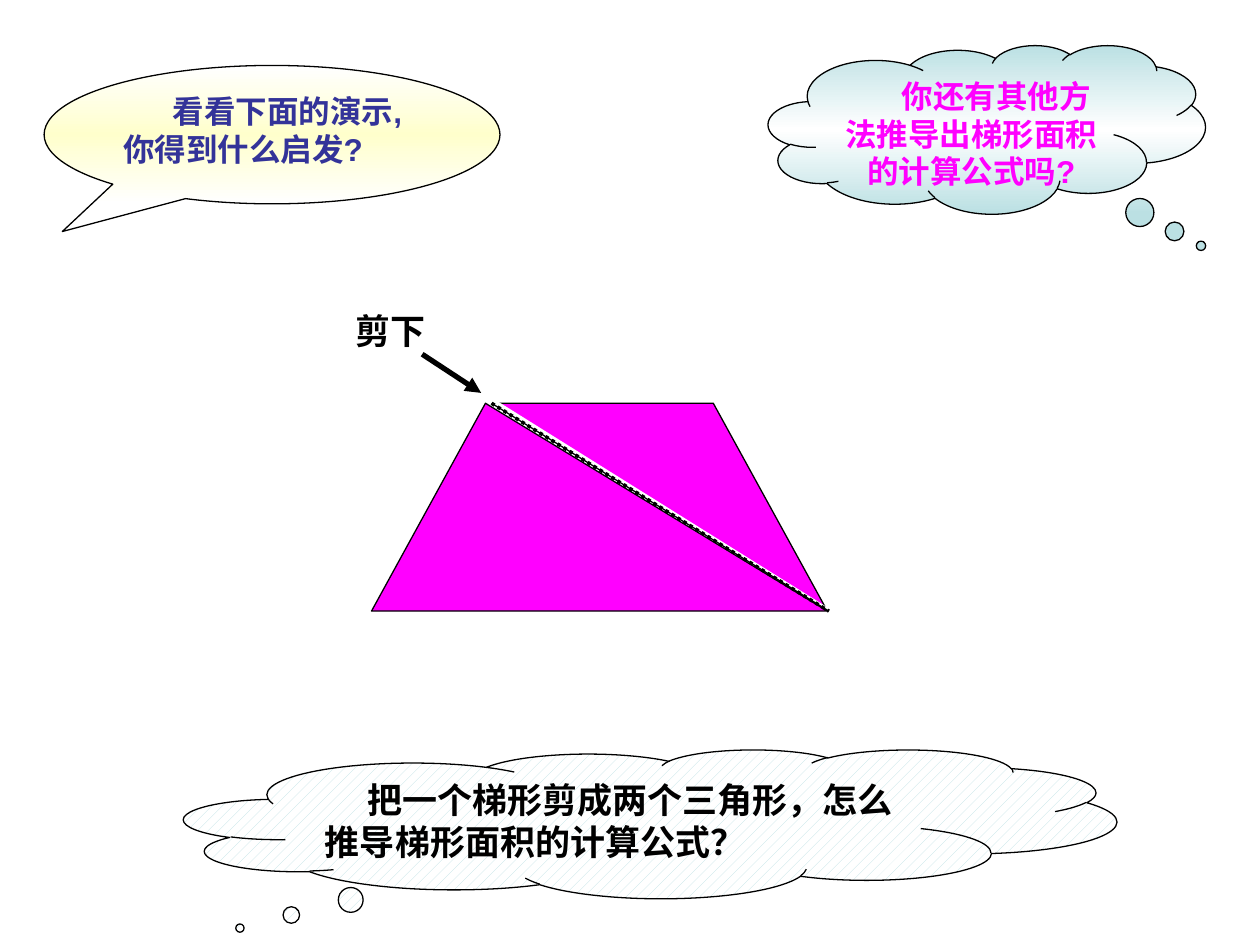
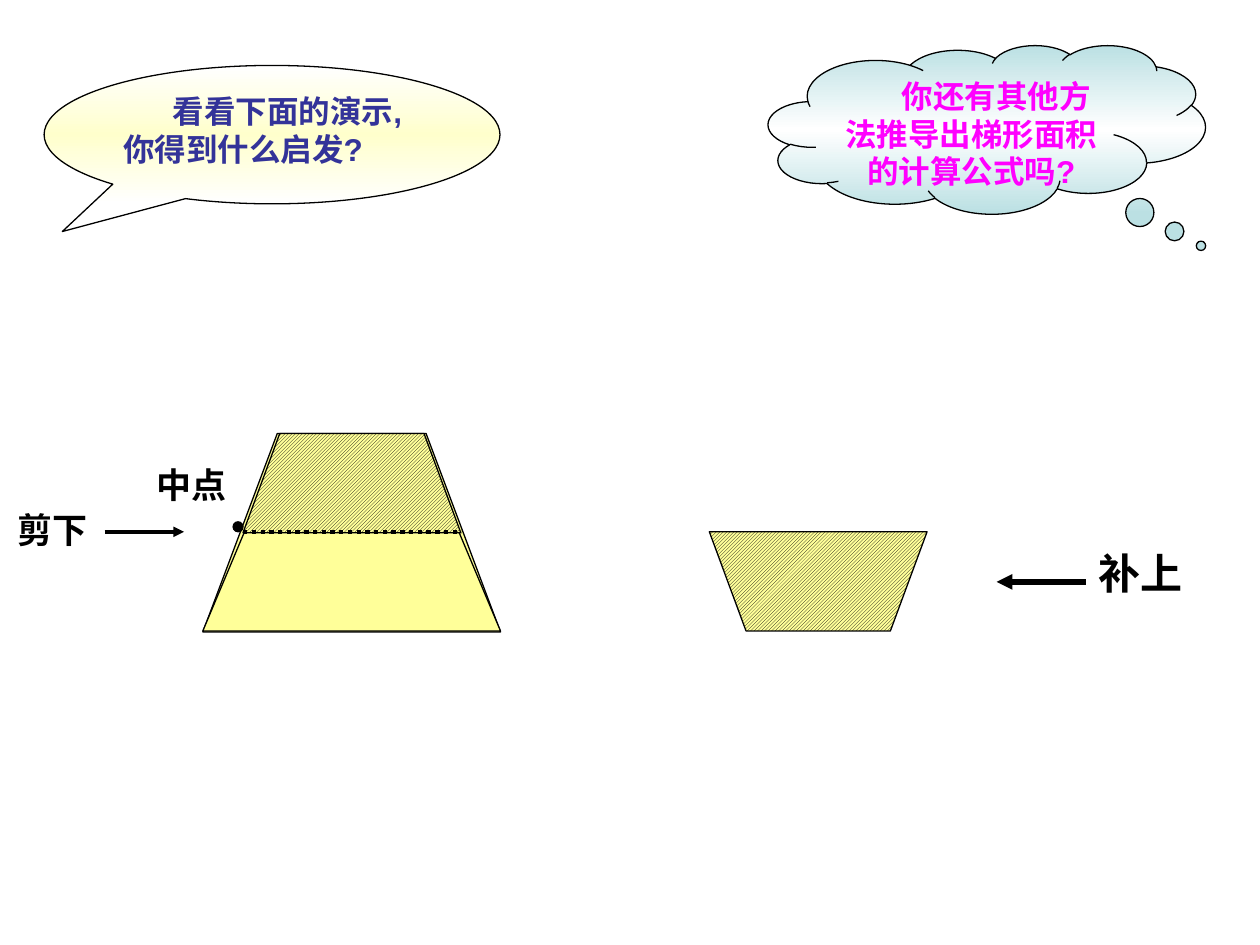
import copy
import pptx
import pptx.dml.color
import pptx.enum.dml
import pptx.enum.shapes
import pptx.enum.text
import pptx.oxml
import pptx.oxml.ns
import pptx.util

Cm = pptx.util.Cm
Pt = pptx.util.Pt
RGB = pptx.dml.color.RGBColor
KIND = pptx.enum.shapes.MSO_SHAPE
HATCH = pptx.enum.dml.MSO_PATTERN
ALIGN = pptx.enum.text.PP_ALIGN
qn = pptx.oxml.ns.qn

# Shared look
FONT = "Arial"
BLACK = RGB(0, 0, 0)
WHITE = RGB(255, 255, 255)
PINK = RGB(0xFF, 0, 0xFF)
NAVY = RGB(0x33, 0x33, 0x99)
AQUA = RGB(0xBB, 0xE0, 0xE3)
CREAM = RGB(0xFF, 0xFF, 0xCC)
YELLOW = RGB(0xFF, 0xFF, 0x99)
THIN = 0.75


def solid(shape, color):
    shape.fill.solid()
    shape.fill.fore_color.rgb = color


def blend(shape, edge, mid):
    """Vertical gradient running edge, middle, edge."""
    shape.fill.gradient()
    shape.fill.gradient_angle = 90
    stops = shape._element.find(".//" + qn("a:gsLst"))
    stops.append(copy.deepcopy(stops[0]))
    rule = ((0, edge), (0.5, mid), (1, edge))
    for stop, (place, color) in zip(shape.fill.gradient_stops, rule):
        stop.position = place
        stop.color.rgb = color


def hatch(shape, kind, fore, back):
    shape.fill.patterned()
    shape.fill.pattern = kind
    shape.fill.fore_color.rgb = fore
    shape.fill.back_color.rgb = back


def outline(shape, color=BLACK):
    shape.shadow.inherit = False
    shape.line.color.rgb = color
    shape.line.width = Pt(THIN)


def figure(slide, kind, box, adjust=(), edge=BLACK):
    shape = slide.shapes.add_shape(kind, *map(Cm, box))
    for i, value in enumerate(adjust):
        shape.adjustments[i] = value
    outline(shape, edge)
    return shape


def trapeze(slide, box, inset, flip=False):
    """Trapezoid whose short side is inset at both ends."""
    left, top, width, height = box
    right, base = left + width, top + height
    if flip:
        top, base = base, top
    points = [(left, base), (left + inset, top),
              (right - inset, top), (right, base)]
    points = [(Cm(x), Cm(y)) for x, y in points]
    pen = slide.shapes.build_freeform(*points[0])
    pen.add_line_segments(points[1:], close=True)
    shape = pen.convert_to_shape()
    outline(shape)
    return shape


def write(shape, text, size, color, align=ALIGN.LEFT, indent=0):
    frame = shape.text_frame
    frame.word_wrap = True
    frame.vertical_anchor = pptx.enum.text.MSO_ANCHOR.TOP
    frame.text = text
    para = frame.paragraphs[0]
    para.alignment = align
    if indent:
        para._p.get_or_add_pPr().set("indent", str(Cm(indent)))
    font = para.runs[0].font
    font.name, font.size, font.bold = FONT, Pt(size), True
    font.color.rgb = color


def label(slide, text, box, size=20):
    shape = slide.shapes.add_textbox(*map(Cm, box))
    write(shape, text, size, BLACK)
    shape.text_frame.auto_size = pptx.enum.text.MSO_AUTO_SIZE.SHAPE_TO_FIT_TEXT


def line(slide, ends, width=THIN, dotted=False, arrow=False):
    link = slide.shapes.add_connector(
        pptx.enum.shapes.MSO_CONNECTOR.STRAIGHT, *map(Cm, ends))
    link.line.color.rgb = BLACK
    link.line.width = Pt(width)
    if dotted:
        link.line.dash_style = pptx.enum.dml.MSO_LINE.ROUND_DOT
    props = link._element.spPr
    if arrow:
        tail = pptx.oxml.parse_xml(
            "<a:tailEnd %s type='triangle'/>" % pptx.oxml.ns.nsdecls("a"))
        props.find(qn("a:ln")).append(tail)
    props.append(pptx.oxml.parse_xml(
        "<a:effectLst %s/>" % pptx.oxml.ns.nsdecls("a")))


def base_slide(deck):
    """Blank slide with the two callouts that head each page."""
    slide = deck.slides.add_slide(deck.slide_layouts[6])
    cloud = figure(slide, KIND.CLOUD_CALLOUT, (15.49, 0.91, 8.81, 3.4),
                   (0.49, 0.69))
    blend(cloud, AQUA, WHITE)
    write(cloud, "你还有其他方法推导出梯形面积的计算公式吗?", 18, PINK,
          ALIGN.CENTER, 1)
    speech = figure(slide, KIND.OVAL_CALLOUT, (0.89, 1.32, 9.19, 2.79),
                    (-0.46, 0.7))
    blend(speech, WHITE, CREAM)
    write(speech, "看看下面的演示,你得到什么启发?", 18, NAVY, indent=1)
    return slide


def split_slide(deck):
    slide = base_slide(deck)
    whole = (7.49, 8.13, 9.19, 4.19)
    cut = (9.91, 8.13, 16.71, 12.32)

    # Upper triangle: trapezoid with its lower half masked
    solid(trapeze(slide, whole, 2.3), PINK)
    mask = figure(slide, KIND.RECTANGLE, (6.91, 9.73, 10.01, 5), edge=WHITE)
    mask.rotation = 32
    solid(mask, WHITE)

    # Question
    cloud = figure(slide, KIND.CLOUD_CALLOUT, (3.71, 15.11, 18.8, 3),
                   (-0.44, 0.7))
    hatch(cloud, HATCH.PERCENT_20, AQUA, WHITE)
    write(cloud, "把一个梯形剪成两个三角形，怎么推导梯形面积的计算公式？",
          20, BLACK, indent=0.85)

    # Lower triangle and the cut
    solid(figure(slide, KIND.ISOSCELES_TRIANGLE, whole, (0.25,)), PINK)
    line(slide, cut)
    label(slide, "剪下", (6.91, 6.12, 3.99, 1.09))
    line(slide, (8.51, 7.14, 9.7, 7.92), 3, arrow=True)
    line(slide, cut, 2, dotted=True)


def fold_slide(deck):
    slide = base_slide(deck)
    mid = 10.72
    small = (4.39, 2)

    # Whole trapezoid, then its lower and upper parts
    solid(trapeze(slide, (4.09, 8.74, 6, 4), 1.5), YELLOW)
    solid(trapeze(slide, (4.09, mid, 6, 2), 0.84), YELLOW)
    upper = trapeze(slide, (4.9, 8.74, *small), 0.74)
    moved = trapeze(slide, (14.3, mid, *small), 0.74, flip=True)
    for part in (upper, moved):
        hatch(part, HATCH.LIGHT_UPWARD_DIAGONAL, BLACK, YELLOW)
    line(slide, (4.9, mid, 9.3, mid), 2.5, dotted=True)

    # Labels and arrows
    label(slide, "剪下", (0.1, 10.13, 2.69, 1.09))
    line(slide, (2.11, mid, 3.71, mid), 2, arrow=True)
    label(slide, "补上", (21.89, 10.92, 2.79, 1.27), 24)
    line(slide, (21.89, 11.73, 20.09, 11.73), 3, arrow=True)
    label(slide, "中点", (2.9, 9.22, 2.01, 1.09))
    solid(figure(slide, KIND.OVAL, (4.7, 10.52, 0.2, 0.2)), BLACK)


def main():
    deck = pptx.Presentation()
    deck.slide_width, deck.slide_height = Cm(25.4), Cm(19.05)
    split_slide(deck)
    fold_slide(deck)
    deck.save("out.pptx")


if __name__ == "__main__":
    main()
